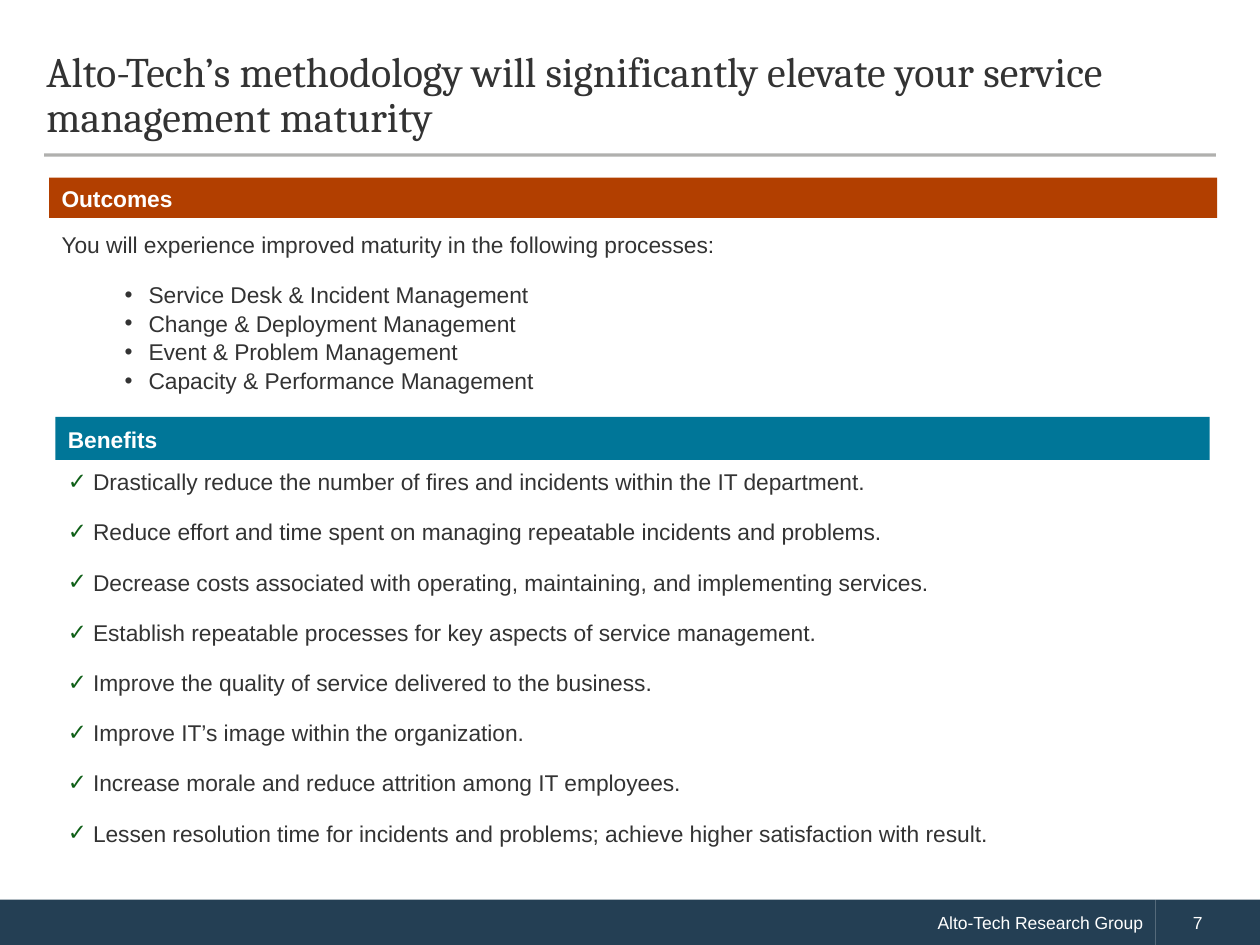
"""Builds the slide on service management outcomes and benefits."""
from lxml import etree
from pptx import Presentation
from pptx.dml.color import RGBColor
from pptx.enum.shapes import MSO_CONNECTOR, MSO_SHAPE
from pptx.enum.text import MSO_ANCHOR, PP_ALIGN
from pptx.oxml.ns import qn
from pptx.util import Inches, Pt

LEFT, RIGHT = PP_ALIGN.LEFT, PP_ALIGN.RIGHT
TOP, MIDDLE = MSO_ANCHOR.TOP, MSO_ANCHOR.MIDDLE
RECTANGLE, STRAIGHT = MSO_SHAPE.RECTANGLE, MSO_CONNECTOR.STRAIGHT

WHITE = RGBColor(0xFF, 0xFF, 0xFF)
INK = RGBColor(0x33, 0x33, 0x33)
NAVY = RGBColor(0x24, 0x3F, 0x54)
ORANGE = RGBColor(0xB2, 0x3F, 0x00)
TEAL = RGBColor(0x00, 0x76, 0x98)
GREEN = RGBColor(0x0F, 0x5F, 0x17)
RULE = RGBColor(0x45, 0x43, 0x3E)

BODY = {"name": "Arial", "size": Pt(13), "color": INK}
HEADING = {"name": "Arial", "size": Pt(13), "color": WHITE, "bold": True}
FOOTER = {"name": "Arial", "size": Pt(10), "color": WHITE}
TITLE = {"name": "Cambria", "size": Pt(24), "color": INK}


def add_box(slide, area, anchor, fill=None):
    area = [Inches(length) for length in area]
    if fill is None:
        box = slide.shapes.add_textbox(*area)
    else:
        box = slide.shapes.add_shape(RECTANGLE, *area)
        box.shadow.inherit = False
        box.fill.solid()
        box.fill.fore_color.rgb = fill
        box.line.fill.background()
    box.text_frame.word_wrap = True
    box.text_frame.vertical_anchor = anchor
    return box.text_frame


def write(para, text, font, layout, indent=(0, 0), bullet=None, bullet_color=None):
    properties = para._p.get_or_add_pPr()
    properties.set("marL", str(Inches(indent[0])))
    properties.set("indent", str(Inches(indent[1])))
    for name, value in layout.items():
        setattr(para, name, value)
    if bullet_color is not None:
        color = etree.SubElement(properties, qn("a:buClr"))
        etree.SubElement(color, qn("a:srgbClr"), val=str(bullet_color))
    if bullet:
        etree.SubElement(properties, qn("a:buFont"), typeface="Arial")
        etree.SubElement(properties, qn("a:buChar"), char=bullet)
    span = para.add_run()
    span.text = text
    for name, value in font.items():
        if name == "color":
            span.font.color.rgb = value
        else:
            setattr(span.font, name, value)


deck = Presentation()
deck.slide_width, deck.slide_height = Inches(10), Inches(7.5)
slide = deck.slides.add_slide(deck.slide_layouts[6])

for area, text, alignment, margin in [
    ((0, 7.14, 9.17, 0.37), "Alto-Tech Research Group", RIGHT, 0.29),
    ((9.17, 7.14, 0.83, 0.37), "7", LEFT, 0.2),
]:
    frame = add_box(slide, area, MIDDLE, NAVY)
    write(frame.paragraphs[0], text, FOOTER, {"alignment": alignment}, (margin, 0))

rule = slide.shapes.add_connector(STRAIGHT, Inches(0.35), Inches(1.23), Inches(9.65), Inches(1.23))
rule.line.width = Pt(1.75)
rule.line.color.rgb = RULE
etree.SubElement(rule._element.spPr, qn("a:effectLst"))
rule_color = rule._element.spPr.find(".//" + qn("a:srgbClr"))
etree.SubElement(rule_color, qn("a:alpha"), val="42000")

frame = add_box(slide, (0.27, 0.29, 9.44, 0.94), MIDDLE)
write(
    frame.paragraphs[0],
    "Alto-Tech’s methodology will significantly elevate your service management maturity",
    TITLE,
    {"line_spacing": Pt(26)},
)

for area, text, fill in [
    ((0.39, 1.41, 9.27, 0.32), "Outcomes", ORANGE),
    ((0.44, 3.31, 9.16, 0.34), "Benefits", TEAL),
]:
    frame = add_box(slide, area, MIDDLE, fill)
    write(frame.paragraphs[0], text, HEADING, {"alignment": LEFT, "line_spacing": 1.07})

spaced = {"line_spacing": 1.07, "space_after": Pt(12)}
outcomes = add_box(slide, (0.39, 1.77, 9.21, 1.38), TOP)
write(
    outcomes.paragraphs[0],
    "You will experience improved maturity in the following processes:",
    BODY,
    spaced,
)
for process in [
    "Service Desk & Incident",
    "Change & Deployment",
    "Event & Problem",
    "Capacity & Performance",
]:
    para = outcomes.add_paragraph()
    para.level = 1
    write(para, f"{process} Management", BODY, {"line_spacing": 1.05}, (0.69, -0.19), "•")

benefits = add_box(slide, (0.44, 3.65, 9.16, 3.13), TOP)
for index, benefit in enumerate([
    "Drastically reduce the number of fires and incidents within the IT department.",
    "Reduce effort and time spent on managing repeatable incidents and problems.",
    "Decrease costs associated with operating, maintaining, and implementing services.",
    "Establish repeatable processes for key aspects of service management.",
    "Improve the quality of service delivered to the business.",
    "Improve IT’s image within the organization.",
    "Increase morale and reduce attrition among IT employees.",
    "Lessen resolution time for incidents and problems; achieve higher satisfaction with result.",
]):
    para = benefits.add_paragraph() if index else benefits.paragraphs[0]
    write(para, benefit, BODY, spaced, (0.2, -0.2), "✓", GREEN)

deck.save("out.pptx")
